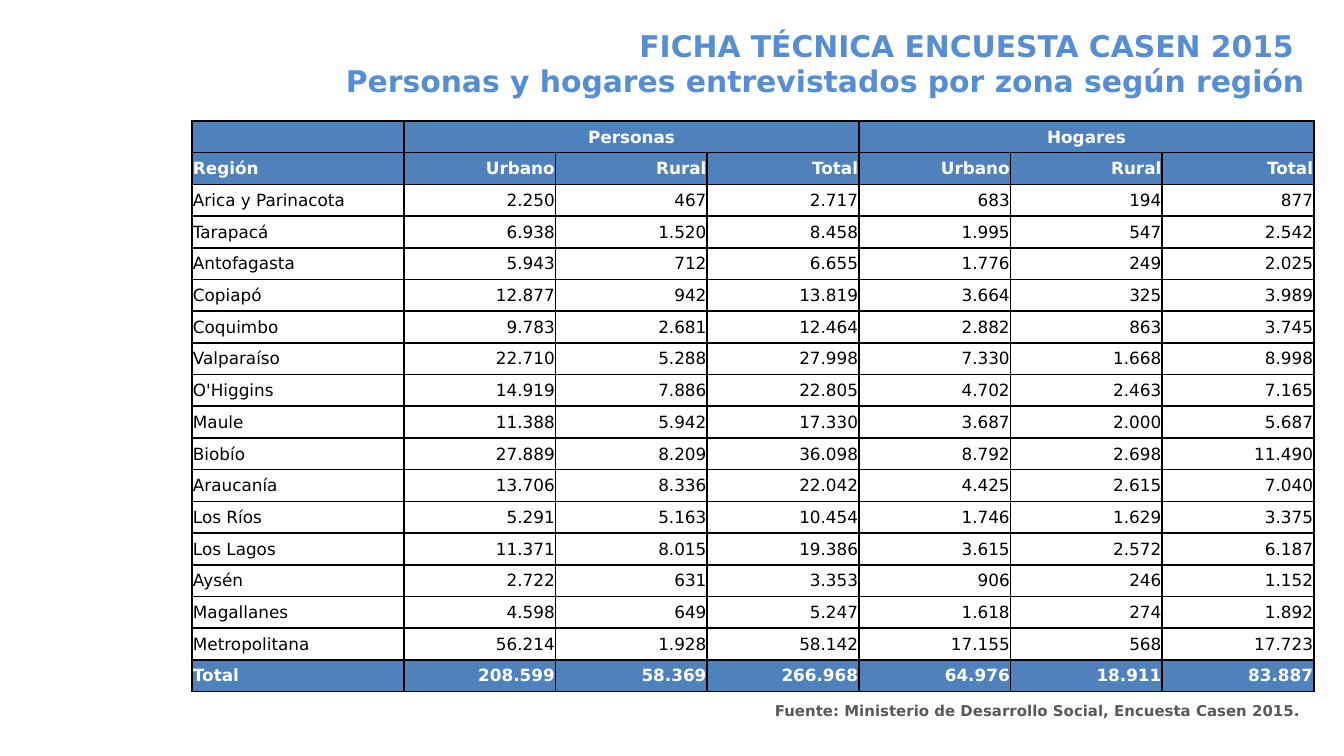
from lxml.etree import SubElement
from pptx import Presentation
from pptx.dml.color import RGBColor
from pptx.enum.shapes import MSO_SHAPE as Shape
from pptx.enum.text import MSO_ANCHOR as Anchor, MSO_AUTO_SIZE as AutoSize, PP_ALIGN as Align
from pptx.oxml.ns import qn
from pptx.util import Pt

SCALE = 9144000 / 1344  # EMU per px
FONT = "DejaVu Sans"
COLORS = {
    "title": "558ED5",
    "band": "4F81BD",
    "white": "FFFFFF",
    "black": "000000",
    "source": "595959",
}

TITLE = [
    "FICHA TÉCNICA ENCUESTA CASEN 2015 ",
    "Personas y hogares entrevistados por zona según región",
]
SOURCE = "Fuente: Ministerio de Desarrollo Social, Encuesta Casen 2015."
GROUPS = ["Personas", "Hogares"]
ZONES = ["Urbano", "Rural", "Total"]
REGIONS = [
    ("Arica y Parinacota", "2.250", "467", "2.717", "683", "194", "877"),
    ("Tarapacá", "6.938", "1.520", "8.458", "1.995", "547", "2.542"),
    ("Antofagasta", "5.943", "712", "6.655", "1.776", "249", "2.025"),
    ("Copiapó", "12.877", "942", "13.819", "3.664", "325", "3.989"),
    ("Coquimbo", "9.783", "2.681", "12.464", "2.882", "863", "3.745"),
    ("Valparaíso", "22.710", "5.288", "27.998", "7.330", "1.668", "8.998"),
    ("O'Higgins", "14.919", "7.886", "22.805", "4.702", "2.463", "7.165"),
    ("Maule", "11.388", "5.942", "17.330", "3.687", "2.000", "5.687"),
    ("Biobío", "27.889", "8.209", "36.098", "8.792", "2.698", "11.490"),
    ("Araucanía", "13.706", "8.336", "22.042", "4.425", "2.615", "7.040"),
    ("Los Ríos", "5.291", "5.163", "10.454", "1.746", "1.629", "3.375"),
    ("Los Lagos", "11.371", "8.015", "19.386", "3.615", "2.572", "6.187"),
    ("Aysén", "2.722", "631", "3.353", "906", "246", "1.152"),
    ("Magallanes", "4.598", "649", "5.247", "1.618", "274", "1.892"),
    ("Metropolitana", "56.214", "1.928", "58.142", "17.155", "568", "17.723"),
]
TOTALS = ("Total", "208.599", "58.369", "266.968", "64.976", "18.911", "83.887")


def px(length):
    return round(length * SCALE)


def rgb(name):
    return RGBColor.from_string(COLORS[name])


def style(paragraph, size, color, bold, align):
    paragraph.alignment = align
    font = paragraph.font
    font.name, font.size, font.bold = FONT, Pt(size), bold
    font.color.rgb = rgb(color)


def add_title(slide, left, top, width, height):
    title = slide.shapes.add_textbox(px(left), px(top), px(width), px(height))
    frame = title.text_frame
    frame.word_wrap = True
    frame.auto_size = AutoSize.SHAPE_TO_FIT_TEXT
    frame.vertical_anchor = Anchor.MIDDLE
    frame.text = "\n".join(TITLE)
    for line in frame.paragraphs:
        style(line, 16, "title", True, Align.RIGHT)


def add_source(slide, left, top, width, height):
    source = slide.shapes.add_shape(Shape.RECTANGLE, px(left), px(top), px(width), px(height))
    source.shadow.inherit = False
    source.fill.solid()
    source.fill.fore_color.rgb = rgb("white")
    source.line.fill.background()
    frame = source.text_frame
    frame.word_wrap = False
    frame.vertical_anchor = Anchor.TOP
    frame.text = SOURCE
    style(frame.paragraphs[0], 8, "source", True, Align.RIGHT)


def add_borders(cell):
    properties = cell._tc.get_or_add_tcPr()
    for position, side in enumerate(("lnL", "lnR", "lnT", "lnB")):
        border = properties.makeelement(qn(f"a:{side}"), {"w": str(Pt(1))})
        properties.insert(position, border)
        fill = SubElement(border, qn("a:solidFill"))
        SubElement(fill, qn("a:srgbClr"), val=COLORS["black"])


def fill_cell(cell, text, band, align):
    cell.margin_left = cell.margin_right = cell.margin_top = px(1)
    cell.margin_bottom = 0
    cell.vertical_anchor = Anchor.MIDDLE
    if band:
        cell.fill.solid()
        cell.fill.fore_color.rgb = rgb("band")
    else:
        cell.fill.background()
    add_borders(cell)
    cell.text = text
    paragraph = cell.text_frame.paragraphs[0]
    style(paragraph, 9, "white" if band else "black", band, align)
    if not text:  # an empty cell must not stretch its row
        SubElement(paragraph._p, qn("a:endParaRPr"), sz="900")


def add_region_table(slide, left, top, region_width, zones_width, height):
    # Two header rows, the regions and the totals
    group_row = [""]
    for group in GROUPS:
        group_row += [group, "", ""]
    rows = [group_row, ["Región"] + ZONES * len(GROUPS), *REGIONS, TOTALS]
    row_count, column_count = len(rows), len(TOTALS)
    table = slide.shapes.add_table(
        row_count, column_count, px(left), px(top), px(region_width + zones_width), px(height)
    ).table
    table.first_row = table.horz_banding = False

    # Even rows and zone columns
    for row in table.rows:
        row.height = px(height / row_count)
    for column in table.columns:
        column.width = px(zones_width / (column_count - 1))
    table.columns[0].width = px(region_width)

    for r, values in enumerate(rows):
        band = r < 2 or r == row_count - 1
        for c, value in enumerate(values):
            align = Align.LEFT if c == 0 else Align.CENTER if r == 0 else Align.RIGHT
            fill_cell(table.cell(r, c), value, band, align)

    # Each group heading spans its zones
    for first in range(1, column_count, len(ZONES)):
        table.cell(0, first).merge(table.cell(0, first + len(ZONES) - 1))


def main():
    presentation = Presentation()
    presentation.slide_width, presentation.slide_height = px(1344), px(756)
    slide = presentation.slides.add_slide(presentation.slide_layouts[6])
    add_title(slide, 122, 20, 1196, 86)
    add_region_table(slide, 192, 121, 212, 910, 571)
    add_source(slide, 615, 695, 699, 23)
    presentation.save("out.pptx")


if __name__ == "__main__":
    main()
